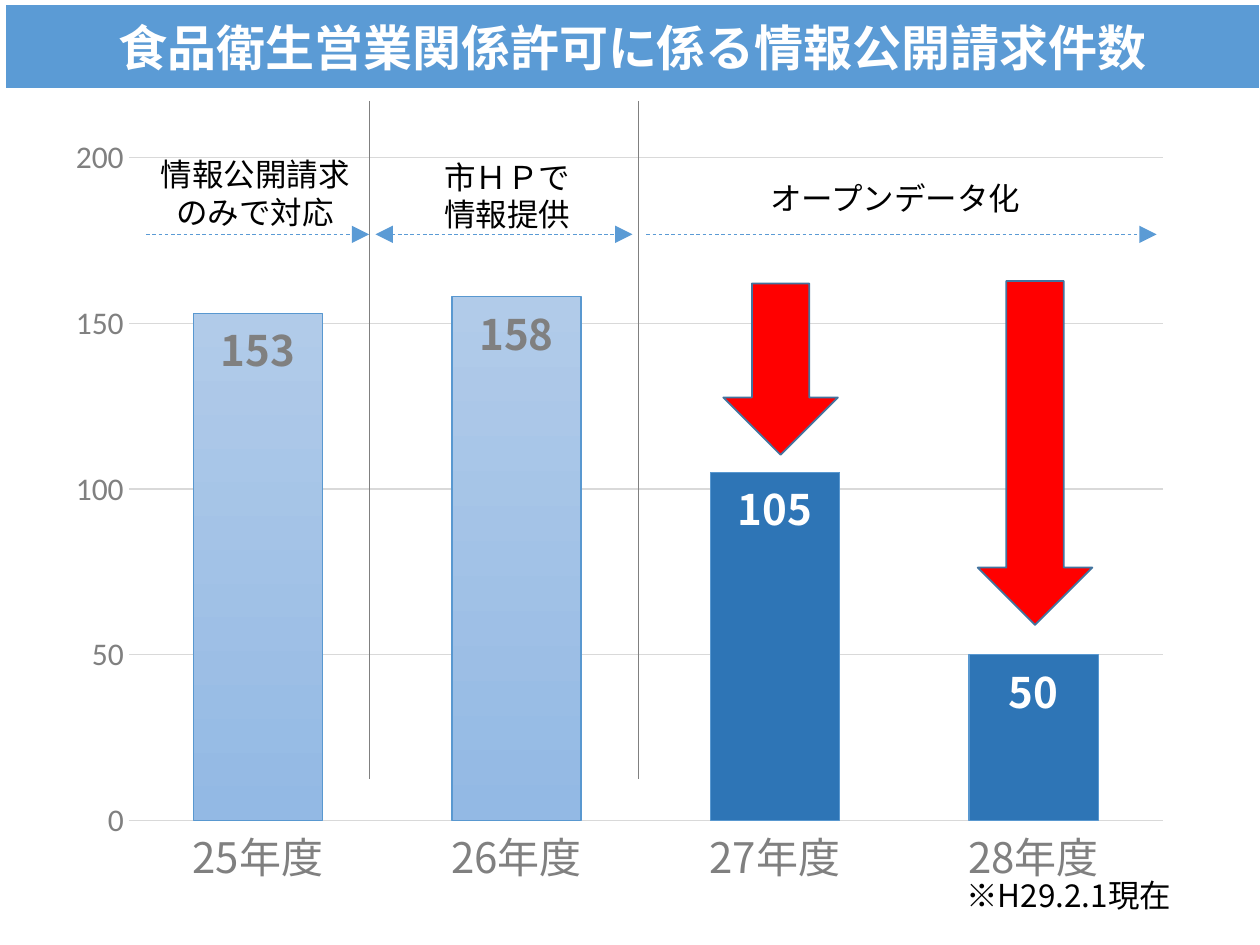
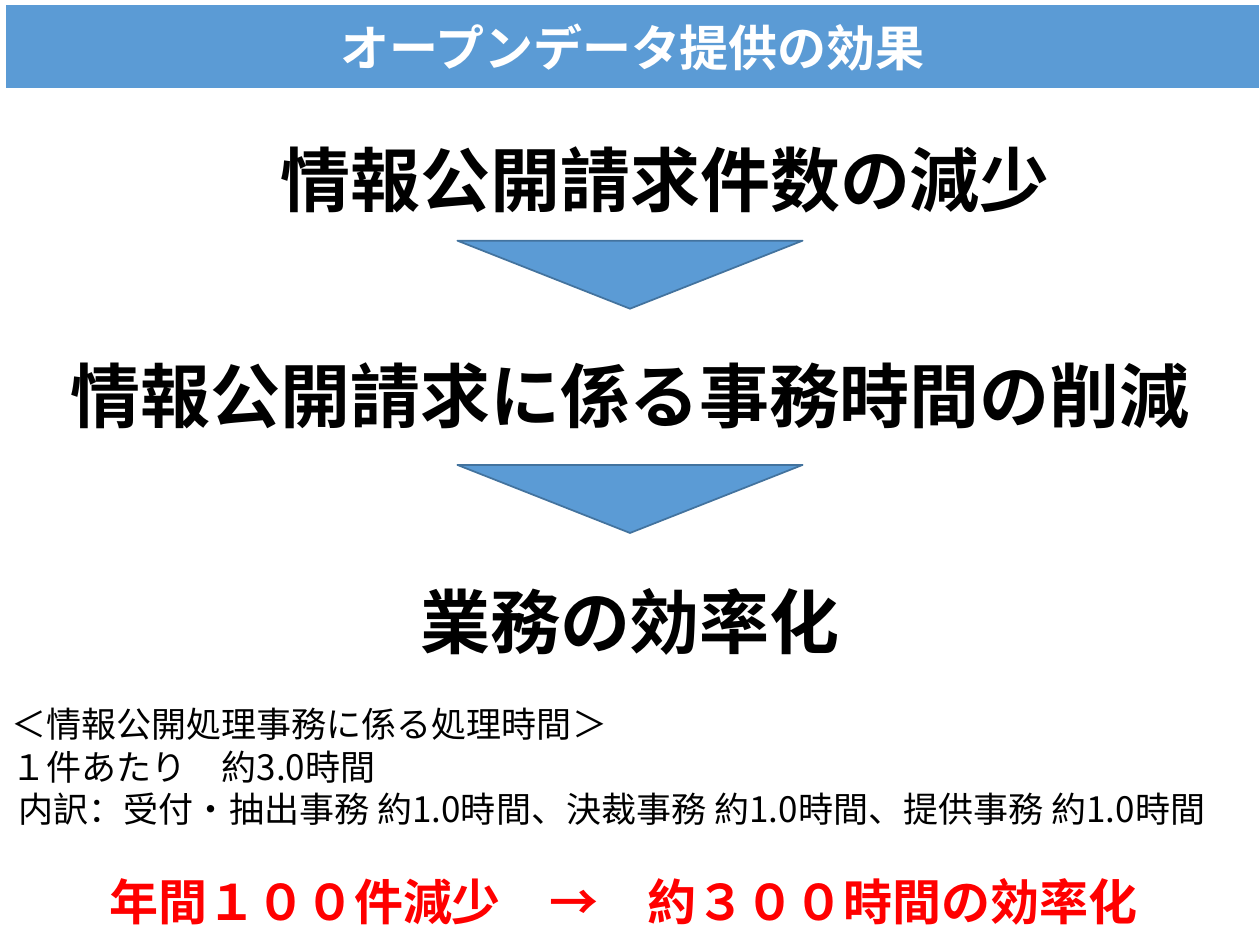
from dataclasses import dataclass

from lxml import etree
from pptx import Presentation, util as u
from pptx.chart import data as cd
from pptx.dml.color import RGBColor
from pptx.enum import chart as ce, dml, shapes, text
from pptx.oxml import parse_xml
from pptx.oxml.ns import nsdecls, qn

Inches, Pt = u.Inches, u.Pt
LEFT, CENTER = text.PP_ALIGN.LEFT, text.PP_ALIGN.CENTER


@dataclass(frozen=True)
class Theme:
    face: str = "Noto Sans CJK JP"
    digits: str = "Calibri"
    blue: str = "5B9BD5"
    edge: str = "43739E"
    deep: str = "2E75B6"
    pale: tuple = ("B1CBE9", "93B9E4")
    rim: str = "5998D0"
    red: str = "FF0000"
    black: str = "000000"
    white: str = "FFFFFF"
    gray: str = "808080"
    grid: str = "D9D9D9"
    small: int = 18
    note: int = 20
    axis: int = 24
    head: int = 28
    big: int = 40


def color(code):
    return RGBColor.from_string(code)


class Deck:
    def __init__(self, theme):
        self.theme = theme
        self.prs = Presentation()
        self.prs.slide_width, self.prs.slide_height = Inches(10), Inches(7.5)
        self.slide = None

    # Shared formatting
    def style(self, font, size, code, bold=False, face=None):
        face = face or self.theme.face
        font.size, font.bold, font.name = Pt(size), bold, face
        font.color.rgb = color(code)
        etree.SubElement(font._rPr, qn("a:ea")).set("typeface", face)

    def paint(self, item, fill, line, width):
        item.fill.solid()
        item.fill.fore_color.rgb = color(fill)
        self.stroke(item.line, line, width)

    def stroke(self, line, code, width):
        line.color.rgb = color(code)
        line.width = Pt(width)

    # Slide with its title band
    def add(self, title):
        self.slide = self.prs.slides.add_slide(self.prs.slide_layouts[5])
        band = self.slide.shapes.title
        band.left, band.top = Inches(0.04), Inches(0.03)
        band.width, band.height = Inches(9.96), Inches(0.68)
        self.paint(band, self.theme.blue, self.theme.white, 1.5)
        frame = band.text_frame
        frame.auto_size = text.MSO_AUTO_SIZE.NONE
        frame.vertical_anchor = text.MSO_ANCHOR.MIDDLE
        frame.text = title
        para = frame.paragraphs[0]
        para.alignment = CENTER
        self.style(para.font, self.theme.head, self.theme.white, True)

    def box(self, at, lines, size, align=CENTER, bold=False):
        frame = self.slide.shapes.add_textbox(*map(Inches, at)).text_frame
        frame.word_wrap = True
        frame.auto_size = text.MSO_AUTO_SIZE.SHAPE_TO_FIT_TEXT
        if align == CENTER:
            frame.vertical_anchor = text.MSO_ANCHOR.BOTTOM
        for i, line in enumerate(lines):
            para = frame.paragraphs[0] if i == 0 else frame.add_paragraph()
            self.para(para, line, size, self.theme.black, bold, align)
        return frame

    def para(self, para, line, size, code, bold=False, align=LEFT):
        para.text, para.alignment = line, align
        self.style(para.font, size, code, bold)

    def indent(self, para, width):
        props = para._p.get_or_add_pPr()
        props.set("marL", str(Inches(width)))
        props.set("indent", "0")

    def shape(self, kind, at, fill, turn=0):
        item = self.slide.shapes.add_shape(kind, *map(Inches, at))
        item.shadow.inherit = False
        item.rotation = turn
        self.paint(item, fill, self.theme.edge, 1)

    def line(self, start, end, code, ends=(), dash=False):
        item = self.slide.shapes.add_connector(
            shapes.MSO_CONNECTOR.STRAIGHT, *map(Inches, start + end))
        self.stroke(item.line, code, 0.5)
        if dash:
            item.line.dash_style = dml.MSO_LINE.DASH
        for end in ends:
            tip = etree.SubElement(item.line._get_or_add_ln(), qn(f"a:{end}"))
            for key, val in (("type", "triangle"), ("w", "lg"), ("len", "lg")):
                tip.set(key, val)
        etree.SubElement(item._element.spPr, qn("a:effectLst"))

    # Column chart; the columns listed in strong are dark with white labels
    def chart(self, at, names, vals, strong):
        theme = self.theme
        data = cd.CategoryChartData()
        data.categories = names
        data.add_series("件数", vals)
        chart = self.slide.shapes.add_chart(
            ce.XL_CHART_TYPE.COLUMN_CLUSTERED, *map(Inches, at), data).chart
        chart.has_legend = chart.has_title = False
        self.style(chart.font, 10, theme.black, face=theme.digits)
        self.axes(chart)
        plot = chart.plots[0]
        plot.gap_width, plot.overlap = 100, -24
        plot.vary_by_categories = False

        bars = plot.series[0]
        fill = bars.format.fill
        fill.gradient()
        fill.gradient_angle = 270
        for stop, code, pos in zip(fill.gradient_stops, theme.pale, (0, 1)):
            stop.color.rgb, stop.position = color(code), pos
        self.stroke(bars.format.line, theme.rim, 0.75)
        tags = bars.data_labels
        tags.show_value = True
        tags.position = ce.XL_LABEL_POSITION.INSIDE_END
        self.style(tags.font, theme.axis, theme.gray, True)
        for i in strong:
            point = bars.points[i]
            self.paint(point.format, theme.deep, theme.rim, 0.75)
            self.style(point.data_label.font, theme.axis, theme.white, True)
            point.data_label.position = ce.XL_LABEL_POSITION.INSIDE_END

    def axes(self, chart):
        theme = self.theme
        cat, val = chart.category_axis, chart.value_axis
        for axis in (cat, val):
            axis.major_tick_mark = axis.minor_tick_mark = ce.XL_TICK_MARK.NONE
        self.style(cat.tick_labels.font, theme.axis, theme.gray)
        self.stroke(cat.format.line, theme.grid, 0.75)
        self.style(val.tick_labels.font, theme.small, theme.gray,
                   face=theme.digits)
        val.format.line.fill.background()
        val.minimum_scale, val.maximum_scale, val.major_unit = 0, 200, 50
        self.stroke(val.major_gridlines.format.line, theme.grid, 0.75)
        # Fixed plot area
        area = chart._chartSpace.find(f".//{qn('c:plotArea')}")
        for old in area.findall(qn("c:layout")):
            area.remove(old)
        sides = (("x", 0.068), ("y", 0.044), ("w", 0.912), ("h", 0.851))
        modes = '<c:xMode val="edge"/><c:yMode val="edge"/>'
        sizes = "".join(f'<c:{key} val="{num}"/>' for key, num in sides)
        area.insert(0, parse_xml(
            f'<c:layout {nsdecls("c")}><c:manualLayout>'
            f'<c:layoutTarget val="inner"/>{modes}{sizes}'
            '</c:manualLayout></c:layout>'))


def counts(deck):
    theme = deck.theme
    deck.add("食品衛生営業関係許可に係る情報公開請求件数")
    deck.chart((0.41, 0.98, 9, 6.18),
               ["25年度", "26年度", "27年度", "28年度"],
               [153, 158, 105, 50], strong=(2, 3))
    deck.box((7.57, 6.9, 2.2, 0.4), ["※H29.2.1現在"], theme.small, LEFT)

    # Phases
    for at, lines in (
            ((1.06, 1.17, 1.93, 0.71), ["情報公開請求のみで対応"]),
            ((3.23, 1.19, 1.59, 0.71), ["市ＨＰで", "情報提供"]),
            ((5.19, 1.37, 3.83, 0.4), ["オープンデータ化"])):
        deck.box(at, lines, theme.small)
    for x in (2.93, 5.07):
        deck.line((x, 0.8), (x, 6.18), theme.gray)
    for left, right, ends in ((1.16, 2.93, ["tailEnd"]),
                              (2.98, 5.02, ["headEnd", "tailEnd"]),
                              (5.13, 9.18, ["tailEnd"])):
        deck.line((left, 1.86), (right, 1.86), theme.blue, ends, dash=True)

    # Drops
    for left, top, height in ((5.74, 2.25, 1.36), (7.76, 2.23, 2.73)):
        deck.shape(shapes.MSO_SHAPE.DOWN_ARROW, (left, top, 0.91, height),
                   theme.red)


def effects(deck):
    theme = deck.theme
    deck.add("オープンデータ提供の効果")

    # Chain of effects
    for top, line, shift in ((1.03, "情報公開請求件数の減少", 0.56),
                             (2.74, "情報公開請求に係る事務時間の削減", 0),
                             (4.54, "業務の効率化", 0)):
        frame = deck.box((0, top, 10, 0.77), [line], theme.big, bold=True)
        deck.indent(frame.paragraphs[0], shift)
    for top in (1.91, 3.69):
        deck.shape(shapes.MSO_SHAPE.ISOSCELES_TRIANGLE,
                   (3.63, top, 2.74, 0.54), theme.blue, turn=180)

    # Hours and result
    frame = deck.box((-0.01, 5.53, 10.71, 1.92), [
        "＜情報公開処理事務に係る処理時間＞",
        "１件あたり　約3.0時間",
        "内訳：受付・抽出事務 約1.0時間、決裁事務 約1.0時間、提供事務 約1.0時間",
    ], theme.note, LEFT)
    deck.indent(frame.paragraphs[2], 0.06)
    total = frame.add_paragraph()
    deck.para(total, "年間１００件減少　→　約３００時間の効率化",
              theme.head, theme.red, True)
    total.space_before = Pt(24)
    deck.indent(total, 0.78)


def main():
    deck = Deck(Theme())
    counts(deck)
    effects(deck)
    deck.prs.save("out.pptx")


if __name__ == "__main__":
    main()
